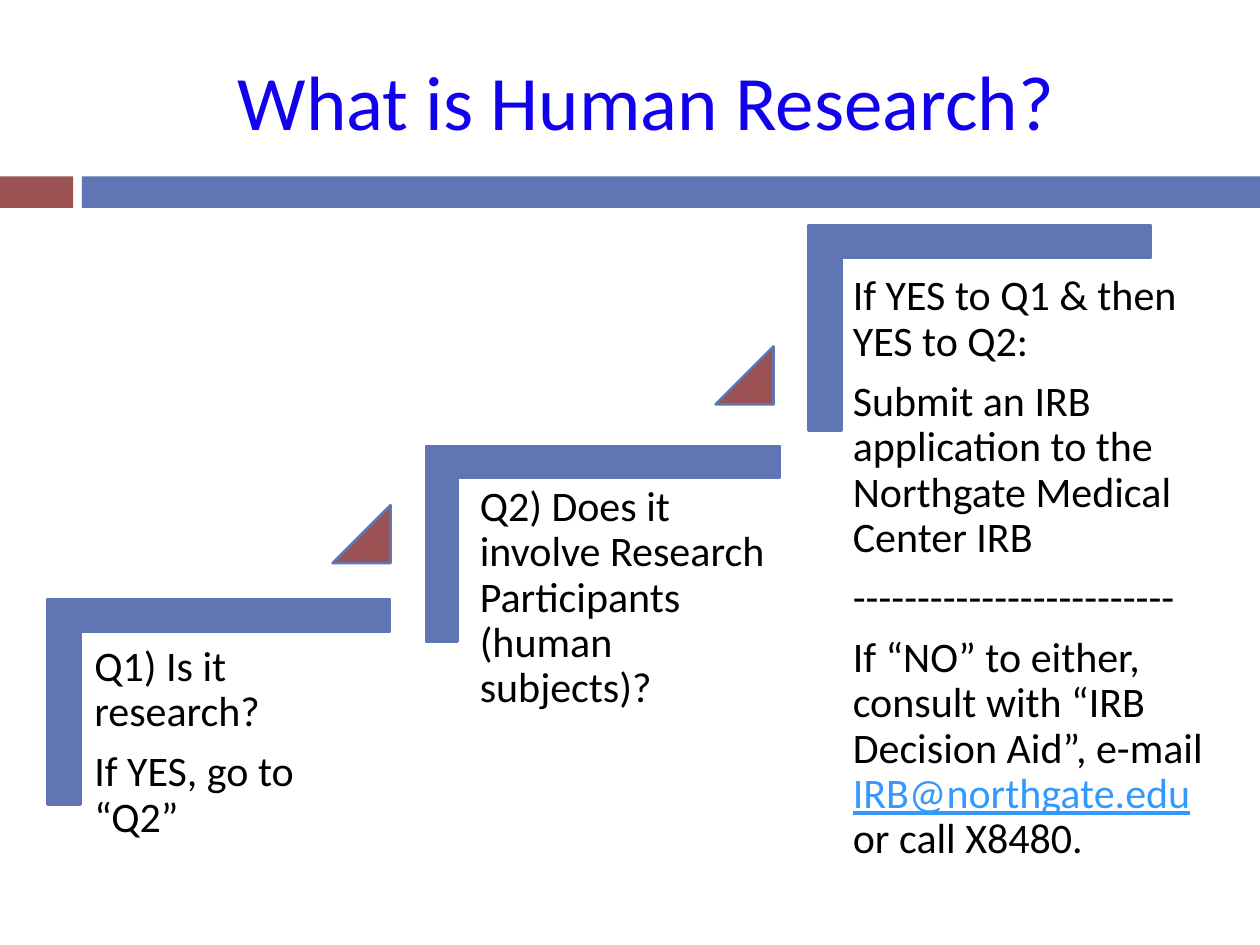
from pptx import Presentation
from pptx.dml.color import RGBColor
from pptx.enum.shapes import MSO_SHAPE
from pptx.enum.text import MSO_ANCHOR, PP_ALIGN
from pptx.util import Inches, Pt

BLUE, RED, BLACK, LINK = "6076B4", "9C5252", "000000", "3399FF"
BODY = {"line_spacing": 0.9, "space_after": Pt(8.4)}
MAIL = "IRB@northgate.edu"

# Each step: corner box, text box, paragraphs
STEPS = [
    ((0.92, 4.21, 1.63, 2.72), (0.65, 5.02, 2.45, 2.15),
     ["Q1) Is it research?", "If YES, go to “Q2”"]),
    ((4.01, 2.91, 1.55, 2.81), (3.71, 3.75, 2.67, 3.17),
     ["Q2) Does it involve Research Participants (human subjects)?"]),
    ((6.96, 1.24, 1.63, 2.72), (6.67, 2.08, 3.08, 4.09),
     ["If YES to Q1 & then YES to Q2:",
      "Submit an IRB application to the Northgate Medical Center IRB",
      "-" * 25,
      f"If “NO” to either, consult with “IRB Decision Aid”, e-mail {MAIL} or call X8480."]),
]
RISES = [(2.64, 4.01), (5.68, 2.75)]


def paint(target, color):
    target.solid()
    target.fore_color.rgb = RGBColor.from_string(color)


def style(item, values):
    for name, value in values.items():
        setattr(item, name, value)


def add_form(slide, kind, box, color, edge=None, adjust=(), turn=0):
    form = slide.shapes.add_shape(kind, *map(Inches, box))
    form.shadow.inherit = False
    form.rotation = turn
    for i, value in enumerate(adjust):
        form.adjustments[i] = value
    paint(form.fill, color)
    if edge:
        paint(form.line.fill, edge)
        form.line.width = Pt(1.5)
    else:
        form.line.fill.background()


def add_run(para, text, size, color, **extra):
    run = para.add_run()
    run.text = text
    style(run.font, {"name": "Calibri", "size": Pt(size), **extra})
    paint(run.font.fill, color)


def add_text(slide, box, lines, size, color, look, frame):
    body = slide.shapes.add_textbox(*map(Inches, box)).text_frame
    style(body, {"word_wrap": True, **frame})
    for i, line in enumerate(lines):
        para = body.paragraphs[0] if i == 0 else body.add_paragraph()
        style(para, look)
        before, mail, after = line.partition(MAIL)
        add_run(para, before, size, color)
        if mail:
            add_run(para, mail, size, LINK, underline=True)
            add_run(para, after, size, color)


def main():
    deck = Presentation()
    style(deck, {"slide_width": Inches(10), "slide_height": Inches(7.5)})
    slide = deck.slides.add_slide(deck.slide_layouts[6])

    # Title and divider bars
    add_form(slide, MSO_SHAPE.RECTANGLE, (0, 1.4, 0.58, 0.25), RED)
    add_form(slide, MSO_SHAPE.RECTANGLE, (0.65, 1.4, 9.35, 0.25), BLUE)
    add_text(slide, (0.67, 0.25, 8.92, 1.08), ["What is Human Research?"], 44,
             "1201ED", {"alignment": PP_ALIGN.CENTER},
             {"vertical_anchor": MSO_ANCHOR.MIDDLE})

    # Staircase of questions
    sides = ("left", "top", "right", "bottom")
    inset = {f"margin_{side}": Inches(0.1) for side in sides}
    for corner, box, lines in STEPS:
        add_form(slide, MSO_SHAPE.CORNER, corner, BLUE, BLUE, (0.161, 0.161), 90)
        add_text(slide, box, lines, 24, BLACK, BODY, inset)

    # Triangles between the steps
    for left, top in RISES:
        add_form(slide, MSO_SHAPE.ISOSCELES_TRIANGLE, (left, top, 0.46, 0.46),
                 RED, BLUE, (1,))

    deck.save("out.pptx")


if __name__ == "__main__":
    main()
